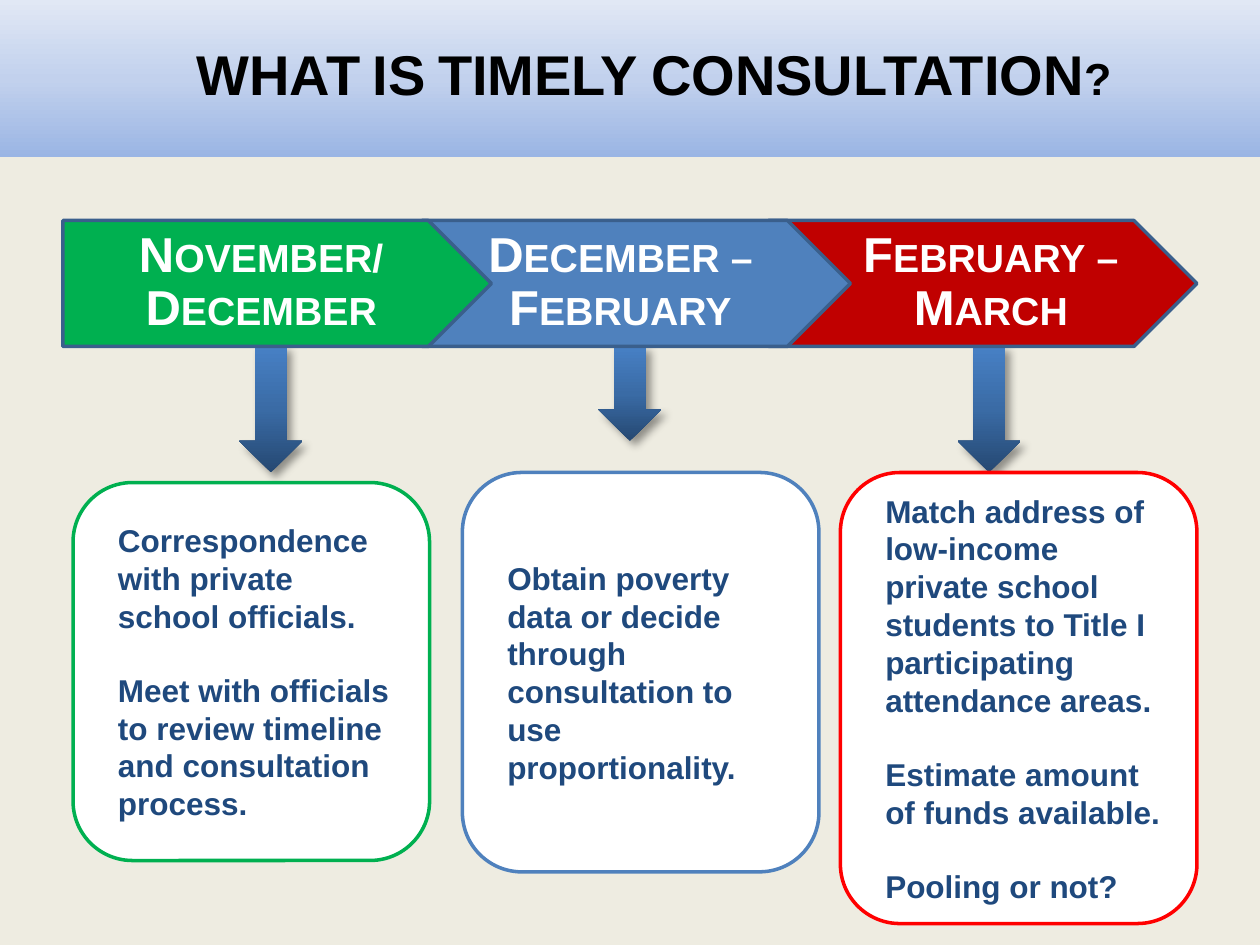
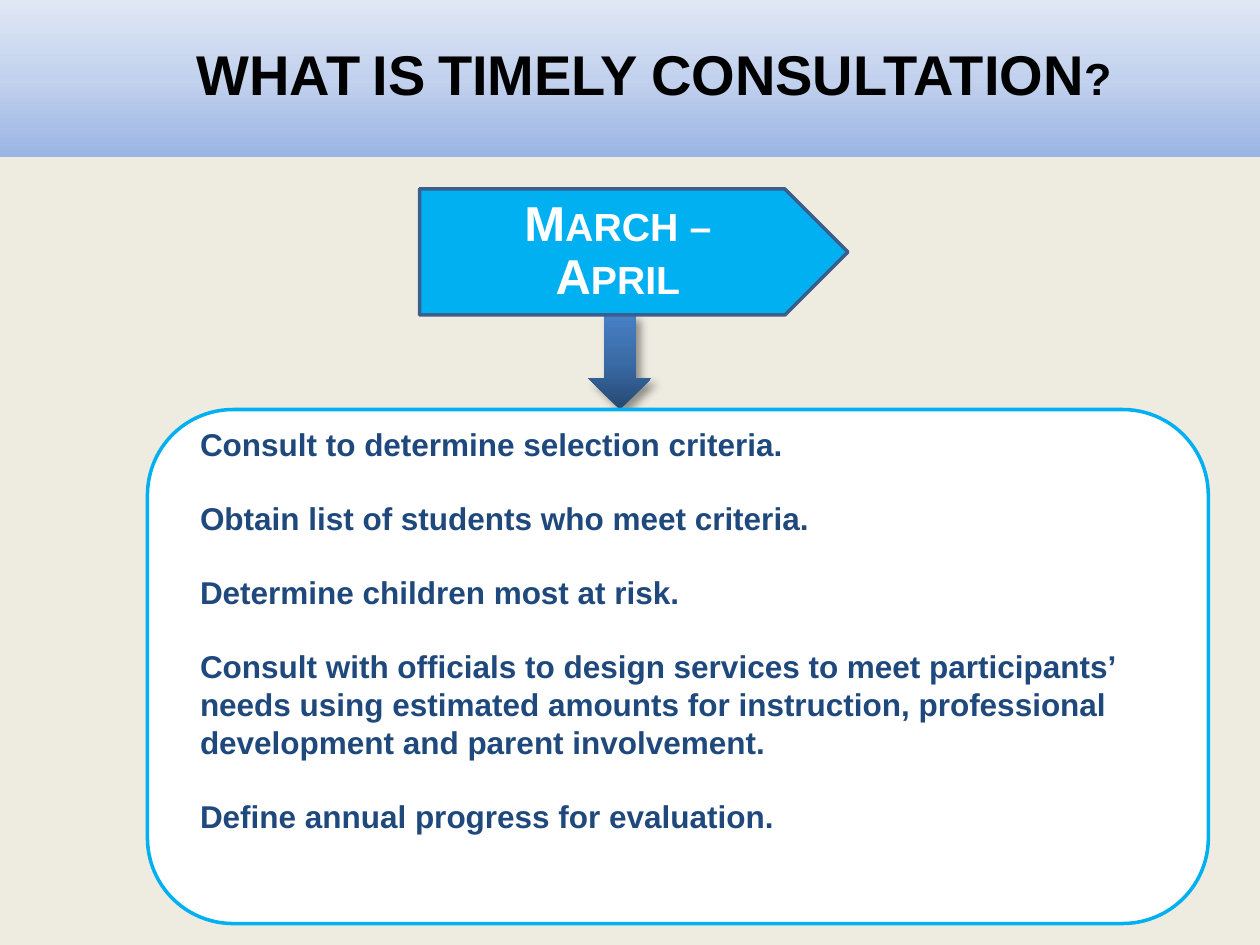
from dataclasses import dataclass

from lxml import etree
from pptx import Presentation
from pptx.dml.color import RGBColor
from pptx.enum.shapes import MSO_SHAPE
from pptx.enum.text import MSO_ANCHOR, MSO_AUTO_SIZE, PP_ALIGN
from pptx.oxml.ns import qn
from pptx.util import Inches, Pt

PLATE = MSO_SHAPE.PENTAGON
ROUNDED = MSO_SHAPE.ROUNDED_RECTANGLE
DOWN_ARROW = MSO_SHAPE.DOWN_ARROW
MIDDLE = MSO_ANCHOR.MIDDLE
CENTER = PP_ALIGN.CENTER
LEFT = PP_ALIGN.LEFT
TITLE_ONLY = 5


@dataclass(frozen=True)
class Theme:
    font: str = "Arial"
    background: str = "EEECE1"
    title_text: str = "000000"
    plate_text: str = "FFFFFF"
    plate_line: str = "3A5F8C"
    box_fill: str = "FFFFFF"
    box_text: str = "1F497D"
    green: str = "00B050"
    blue: str = "4F81BD"
    dark_red: str = "C00000"
    red: str = "FF0000"
    sky: str = "00B0F0"
    band: tuple[str, ...] = ("9AB5E4", "C2D1ED", "E1E8F5")
    arrow: tuple[str, ...] = ("254872", "3A6BA5", "4780C5")
    title_size: float = 32
    plate_size: float = 28
    box_size: float = 18
    box_gap: float = 20.7
    line_width: float = 2


THEME = Theme()


@dataclass(frozen=True)
class Area:
    left: float
    top: float
    width: float
    height: float

    def emu(self) -> tuple:
        return tuple(Inches(v) for v in (self.left, self.top, self.width, self.height))


@dataclass(frozen=True)
class Period:
    lines: tuple[str, ...]
    plate: Area
    plate_fill: str
    arrow: Area
    box: Area
    box_line: str
    tasks: tuple[str, ...]
    plate_indent: float = 0
    box_bottom_inset: float = 0


TITLE = "WHAT IS TIMELY CONSULTATION?"

AUTUMN_TO_MARCH = (
    Period(
        ("November/", "December"), Area(0.5, 1.75, 3.4, 1), THEME.green,
        Area(1.9, 2.75, 0.5, 1), Area(0.58, 3.83, 2.83, 3), THEME.green,
        ("Correspondence with private school officials.",
         "Meet with officials to review timeline and consultation process."),
    ),
    Period(
        ("December –", "February"), Area(3.35, 1.75, 3.4, 1), THEME.blue,
        Area(4.75, 2.75, 0.5, 0.75), Area(3.67, 3.75, 2.83, 3.17), THEME.blue,
        ("Obtain poverty data or decide through consultation to use proportionality.",),
    ),
    Period(
        ("February –", "March"), Area(6.1, 1.75, 3.4, 1), THEME.dark_red,
        Area(7.6, 2.75, 0.5, 1), Area(6.67, 3.75, 2.83, 3.58), THEME.red,
        ("Match address of low-income private school students to Title I "
         "participating attendance areas.",
         "Estimate amount of funds available.",
         "Pooling or not?"),
        plate_indent=0.38,
    ),
)

MARCH_TO_APRIL = (
    Period(
        ("March –", "April"), Area(3.33, 1.5, 3.4, 1), THEME.sky,
        Area(4.67, 2.5, 0.5, 0.75), Area(1.17, 3.25, 8.42, 4.08), THEME.sky,
        ("Consult to determine selection criteria.",
         "Obtain list of students who meet criteria.",
         "Determine children most at risk.",
         "Consult with officials to design services to meet participants’ needs using "
         "estimated amounts for instruction, professional development and parent "
         "involvement.",
         "Define annual progress for evaluation."),
        box_bottom_inset=0.58,
    ),
)


def rgb(color: str) -> RGBColor:
    return RGBColor.from_string(color)


def fill_gradient(sp, colors: tuple[str, ...]) -> None:
    sp.fill.gradient()
    sp.fill.gradient_angle = 90
    stops = sp._element.spPr.find(qn("a:gradFill")).find(qn("a:gsLst"))
    for stop in list(stops):
        stops.remove(stop)
    for i, color in enumerate(colors):
        pos = 100000 * i // (len(colors) - 1)
        stop = etree.SubElement(stops, qn("a:gs"), pos=str(pos))
        etree.SubElement(stop, qn("a:srgbClr"), val=color)


def add_shadow(sp) -> None:
    effects = sp._element.spPr.find(qn("a:effectLst"))
    shadow = etree.SubElement(
        effects, qn("a:outerShdw"), blurRad=str(Pt(5)), dist=str(Pt(4)),
        dir="2700000", algn="tl", rotWithShape="0")
    color = etree.SubElement(shadow, qn("a:srgbClr"), val="000000")
    etree.SubElement(color, qn("a:alpha"), val="40000")


def write(sp, lines: tuple[str, ...], size: float, color: str, align: PP_ALIGN,
          indent: float = 0, spacing: float = 1, gap: float = 0,
          small_caps: bool = False) -> None:
    tf = sp.text_frame
    tf.word_wrap = True
    tf.auto_size = MSO_AUTO_SIZE.NONE
    tf.vertical_anchor = MIDDLE
    for i, line in enumerate(lines):
        p = tf.add_paragraph() if i else tf.paragraphs[0]
        p.text = line
        p.alignment = align
        p.line_spacing = spacing
        p.space_before = Pt(gap if i else 0)
        p.font.name = THEME.font
        p.font.size = Pt(size)
        p.font.bold = True
        p.font.color.rgb = rgb(color)
        pPr = p._p.get_or_add_pPr()
        pPr.set("marL", str(Inches(indent)))
        pPr.set("indent", "0")
        if small_caps:
            pPr.get_or_add_defRPr().set("cap", "small")


def add_shape(slide, kind: MSO_SHAPE, area: Area):
    sp = slide.shapes.add_shape(kind, *area.emu())
    sp.shadow.inherit = False
    return sp


def add_outlined(slide, kind: MSO_SHAPE, area: Area, fill: str, line: str):
    sp = add_shape(slide, kind, area)
    sp.fill.solid()
    sp.fill.fore_color.rgb = rgb(fill)
    sp.line.color.rgb = rgb(line)
    sp.line.width = Pt(THEME.line_width)
    return sp


def add_arrow(slide, period: Period) -> None:
    sp = add_shape(slide, DOWN_ARROW, period.arrow)
    fill_gradient(sp, THEME.arrow)
    sp.line.fill.background()
    add_shadow(sp)


def add_plate(slide, period: Period) -> None:
    sp = add_outlined(slide, PLATE, period.plate, period.plate_fill, THEME.plate_line)
    write(sp, period.lines, THEME.plate_size, THEME.plate_text, CENTER,
          indent=period.plate_indent, spacing=0.9, small_caps=True)


def add_box(slide, period: Period) -> None:
    sp = add_outlined(slide, ROUNDED, period.box, THEME.box_fill, period.box_line)
    sp.text_frame.margin_top = 0
    sp.text_frame.margin_bottom = Inches(period.box_bottom_inset)
    write(sp, period.tasks, THEME.box_size, THEME.box_text, LEFT,
          indent=0.12, gap=THEME.box_gap)


def add_title(slide) -> None:
    sp = slide.shapes.title
    sp.left, sp.top, sp.width, sp.height = Area(0, 0, 10, 1.25).emu()
    fill_gradient(sp, THEME.band)
    write(sp, (TITLE,), THEME.title_size, THEME.title_text, CENTER,
          indent=0.38, spacing=0.85, small_caps=True)


def add_timeline(prs, periods: tuple[Period, ...]) -> None:
    slide = prs.slides.add_slide(prs.slide_layouts[TITLE_ONLY])
    add_title(slide)
    for period in periods:
        add_arrow(slide, period)
    for period in reversed(periods):
        add_plate(slide, period)
    for period in periods:
        add_box(slide, period)


def main() -> None:
    prs = Presentation()
    prs.slide_width, prs.slide_height = Inches(10), Inches(7.5)
    background = prs.slide_master.background.fill
    background.solid()
    background.fore_color.rgb = rgb(THEME.background)
    for periods in (AUTUMN_TO_MARCH, MARCH_TO_APRIL):
        add_timeline(prs, periods)
    prs.save("out.pptx")


if __name__ == "__main__":
    main()
